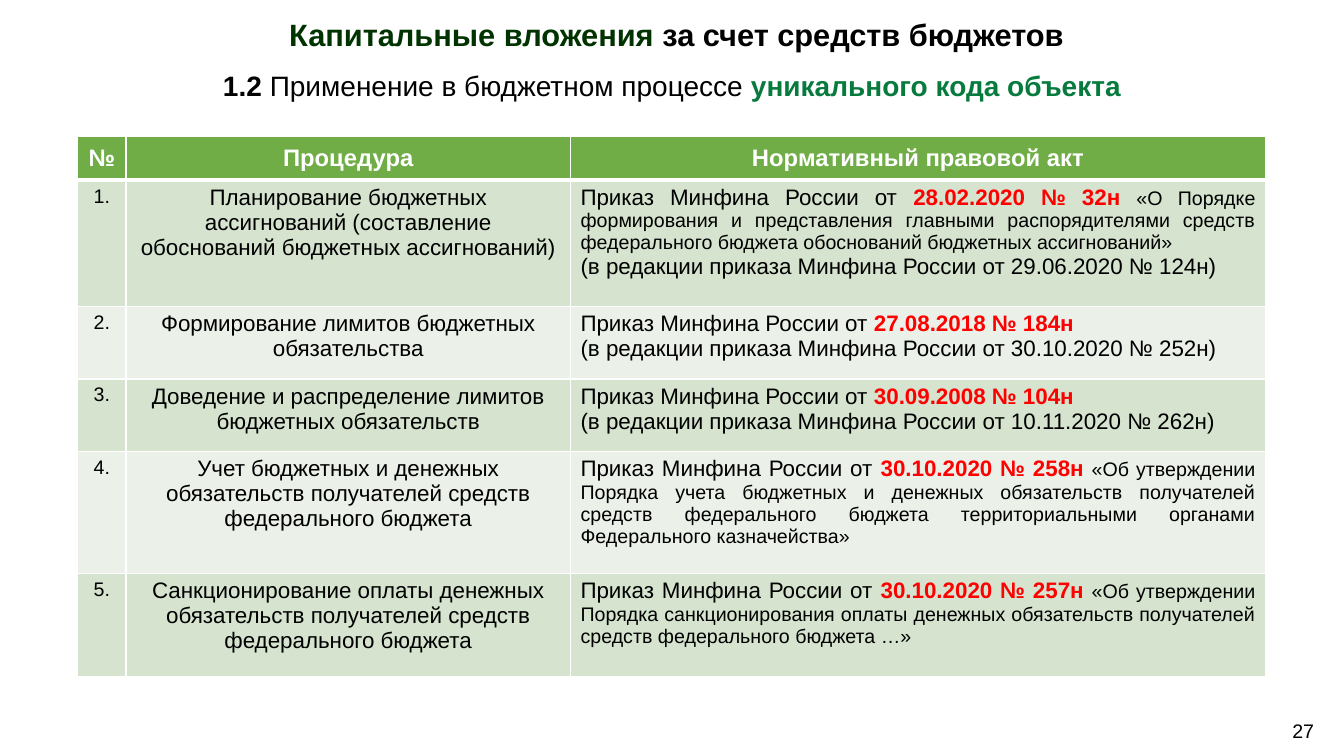
from dataclasses import dataclass

from lxml.etree import SubElement
from pptx import Presentation
from pptx.dml.color import RGBColor
from pptx.enum.text import MSO_ANCHOR, PP_ALIGN
from pptx.oxml.ns import qn
from pptx.util import Pt


@dataclass(frozen=True)
class Theme:
    """Colours, font and type sizes of the slide."""
    font: str = "Arial"
    white: str = "FFFFFF"
    black: str = "000000"
    red: str = "FF0000"
    dark_green: str = "003300"
    green: str = "077A3E"
    header_fill: str = "70AD47"
    row_fills: tuple = ("D5E3CF", "EBF1E9")
    heading: int = 22
    subheading: int = 20
    header: int = 17
    body: int = 16
    small: int = 14
    thin: int = 1
    thick: int = 3


@dataclass(frozen=True)
class Run:
    """A stretch of text in one style."""
    text: str
    size: int
    color: str = Theme.black
    bold: bool = False


class SlideBuilder:
    """Adds styled text and tables to one slide."""

    def __init__(self, slide, theme):
        """Keep the slide and its theme."""
        self.slide = slide
        self.theme = theme

    def add_runs(self, frame, paragraphs, align, spacing=None):
        """Fill a text frame with paragraphs made of runs."""
        for index, runs in enumerate(paragraphs):
            paragraph = frame.add_paragraph() if index else frame.paragraphs[0]
            paragraph.alignment = align
            paragraph.line_spacing = spacing
            for part in runs:
                run = paragraph.add_run()
                run.text = part.text
                run.font.name = self.theme.font
                run.font.size = Pt(part.size)
                run.font.bold = part.bold
                run.font.color.rgb = RGBColor.from_string(part.color)

    def text(self, box, runs, align=PP_ALIGN.CENTER, anchor=MSO_ANCHOR.TOP, spacing=None):
        """Add a one-paragraph text box."""
        frame = self.slide.shapes.add_textbox(*map(Pt, box)).text_frame
        frame.word_wrap = True
        frame.vertical_anchor = anchor
        self.add_runs(frame, [runs], align, spacing)

    def border(self, cell, **widths):
        """Draw white cell borders, given widths by side."""
        properties = cell._tc.get_or_add_tcPr()
        for side in "LRTB":
            width = widths.get(side, self.theme.thin)
            line = SubElement(properties, qn(f"a:ln{side}"), w=str(Pt(width)))
            fill = SubElement(line, qn("a:solidFill"))
            SubElement(fill, qn("a:srgbClr"), val=self.theme.white)

    def cell(self, cell, paragraphs, fill, align, anchor=MSO_ANCHOR.TOP, **widths):
        """Style and fill one table cell."""
        self.border(cell, **widths)
        cell.fill.solid()
        cell.fill.fore_color.rgb = RGBColor.from_string(fill)
        cell.vertical_anchor = anchor
        self.add_runs(cell.text_frame, paragraphs, align)

    def table(self, left, top, widths, heights, headers, rows):
        """Add a table with a header row and banded body rows."""
        theme = self.theme
        table = self.slide.shapes.add_table(
            len(heights), len(widths), Pt(left), Pt(top), Pt(sum(widths)), Pt(sum(heights))
        ).table
        for column, width in zip(table.columns, widths):
            column.width = Pt(width)
        for row, height in zip(table.rows, heights):
            row.height = Pt(height)
        for column, header in enumerate(headers):
            label = Run(header, theme.header, theme.white, True)
            self.cell(table.cell(0, column), [[label]], theme.header_fill,
                      PP_ALIGN.CENTER, MSO_ANCHOR.MIDDLE, B=theme.thick)
        aligns = (PP_ALIGN.CENTER, PP_ALIGN.CENTER, PP_ALIGN.JUSTIFY)
        for number, contents in enumerate(rows, 1):
            fill = theme.row_fills[(number - 1) % 2]
            top_width = theme.thick if number == 1 else theme.thin
            for column, (paragraphs, align) in enumerate(zip(contents, aligns)):
                self.cell(table.cell(number, column), paragraphs, fill, align, T=top_width)


PROCEDURES = [
    ("Планирование бюджетных ассигнований (составление обоснований бюджетных ассигнований)",
     "28.02.2020 № 32н",
     "«О Порядке формирования и представления главными распорядителями средств "
     "федерального бюджета обоснований бюджетных ассигнований»",
     "29.06.2020 № 124н"),
    ("Формирование лимитов бюджетных обязательства",
     "27.08.2018 № 184н", "", "30.10.2020 № 252н"),
    ("Доведение и распределение лимитов бюджетных обязательств",
     "30.09.2008 № 104н", "", "10.11.2020 № 262н"),
    ("Учет бюджетных и денежных обязательств получателей средств федерального бюджета",
     "30.10.2020 № 258н",
     "«Об утверждении Порядка учета бюджетных и денежных обязательств получателей средств "
     "федерального бюджета территориальными органами Федерального казначейства»", ""),
    ("Санкционирование оплаты денежных обязательств получателей средств федерального бюджета",
     "30.10.2020 № 257н",
     "«Об утверждении Порядка санкционирования оплаты денежных обязательств получателей "
     "средств федерального бюджета …»", ""),
]


def procedure_row(theme, number, procedure, order, subject, amendment):
    """Return the three cells of one procedure as paragraphs of runs."""
    act = [Run("Приказ Минфина России от ", theme.body),
           Run(f"{order} ", theme.body, theme.red, True)]
    if subject:
        act.append(Run(subject, theme.small))
    legal_act = [act]
    if amendment:
        legal_act.append([Run(f"(в редакции приказа Минфина России от {amendment})", theme.body)])
    return [[Run(f"{number}.", theme.small)]], [[Run(procedure, theme.body)]], legal_act


def main():
    """Build the slide and save it."""
    theme = Theme()
    presentation = Presentation()
    presentation.slide_width, presentation.slide_height = Pt(960), Pt(540)
    builder = SlideBuilder(presentation.slides.add_slide(presentation.slide_layouts[6]), theme)

    rows = [procedure_row(theme, number, *procedure)
            for number, procedure in enumerate(PROCEDURES, 1)]
    builder.table(55.5, 97.2, (34.5, 317.5, 496.5), (31.5, 90, 52, 52, 87, 73.5),
                  ("№", "Процедура", "Нормативный правовой акт"), rows)
    builder.text((0, 34.5, 960, 56), [
        Run("1.2 ", theme.subheading, bold=True),
        Run("Применение в бюджетном процессе ", theme.subheading),
        Run("уникального кода объекта", theme.subheading, theme.green, True),
    ], anchor=MSO_ANCHOR.MIDDLE, spacing=0.9)
    builder.text((98, 8, 770.5, 34), [
        Run("Капитальные вложения ", theme.heading, theme.dark_green, True),
        Run("за счет средств бюджетов", theme.heading, bold=True),
    ])
    builder.text((916, 510, 34, 24), [Run("27", theme.small)], PP_ALIGN.LEFT)
    presentation.save("out.pptx")


if __name__ == "__main__":
    main()
